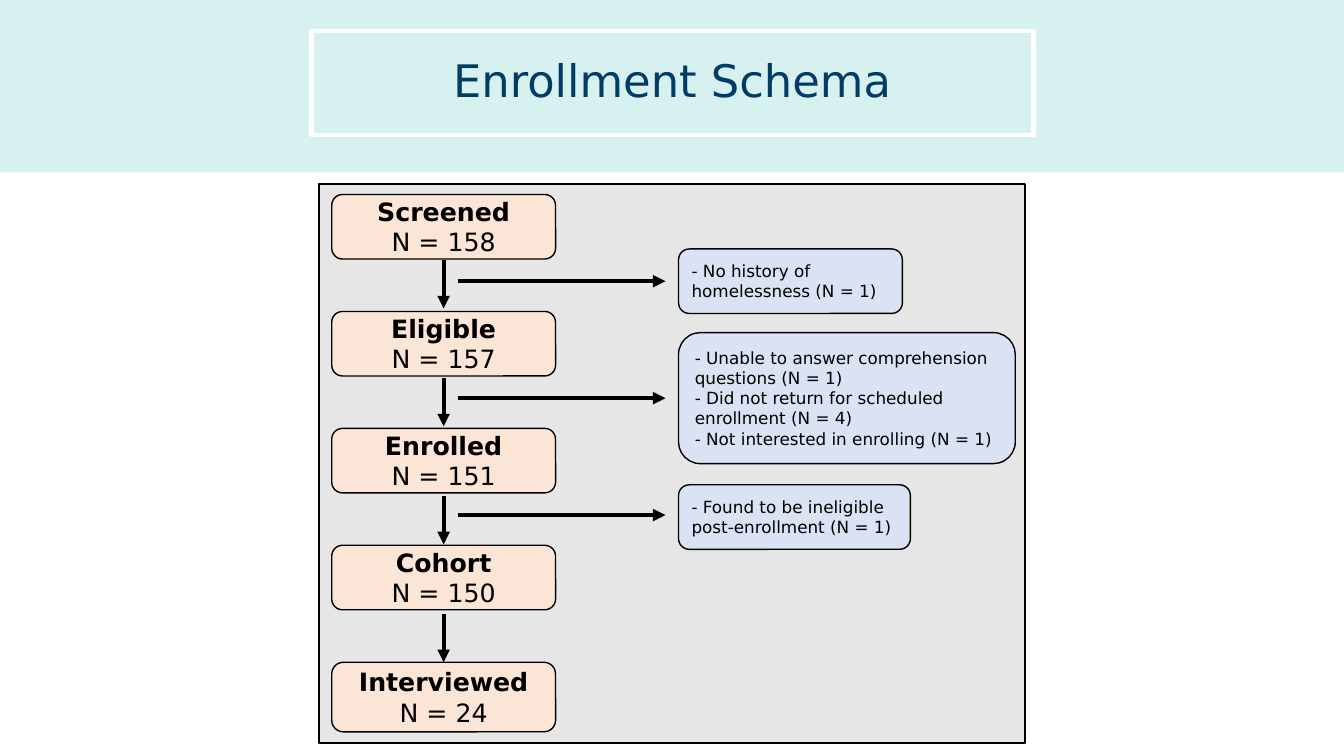
from lxml import etree
from pptx import Presentation
from pptx import util as u
from pptx.dml.color import RGBColor
from pptx.enum import shapes, text
from pptx.oxml.ns import qn

BLACK = RGBColor(0x00, 0x00, 0x00)
WHITE = RGBColor(0xFF, 0xFF, 0xFF)
TEAL = RGBColor(0xB0, 0xE3, 0xE2)
NAVY = RGBColor(0x00, 0x3C, 0x65)
GREY = RGBColor(0xE7, 0xE6, 0xE6)
PEACH = RGBColor(0xFB, 0xE5, 0xD6)
BLUE = RGBColor(0xDA, 0xE3, 0xF3)

STAGES = [
    ("Screened", 158, 0.64),
    ("Eligible", 157, 0.64),
    ("Enrolled", 151, 0.64),
    ("Cohort", 150, 0.64),
    ("Interviewed", 24, 0.69),
]
EXCLUSIONS = [
    (2.47, 2.22, 0.64, ["- No history of homelessness (N = 1)"]),
    (3.3, 3.34, 1.3, [
        "- Unable to answer comprehension questions (N = 1)",
        "- Did not return for scheduled enrollment (N = 4)",
        "- Not interested in enrolling (N = 1)",
    ]),
    (4.81, 2.3, 0.64, ["- Found to be ineligible post-enrollment (N = 1)"]),
]
STAGE_TOP, STAGE_STEP = 1.93, 1.16
DOWN_TOP, DOWN_STEP, DOWN_LENGTH = 2.58, 1.17, 0.48
SIDE_TOP, SIDE_STEP = 2.79, 1.16


class FlowSlide:
    font = "DejaVu Sans"

    def __init__(self, deck):
        self.page = deck.slides.add_slide(deck.slide_layouts[5])

    def label(self, shape, lines, size, color, align, bold_first=False):
        frame = shape.text_frame
        frame.text = "\n".join(lines)
        frame.word_wrap = True
        frame.auto_size = text.MSO_AUTO_SIZE.NONE
        frame.vertical_anchor = text.MSO_ANCHOR.MIDDLE
        for index, para in enumerate(frame.paragraphs):
            para.alignment = align
            for span in para.runs:
                span.font.name = self.font
                span.font.size = u.Pt(size)
                span.font.color.rgb = color
                span.font.bold = bold_first and index == 0

    def title(self, words, left, top, width, height):
        title = self.page.shapes.title
        title.left, title.top = u.Inches(left), u.Inches(top)
        title.width, title.height = u.Inches(width), u.Inches(height)
        title.line.color.rgb = WHITE
        title.line.width = u.Pt(3)
        self.label(title, [words], 32, NAVY, text.PP_ALIGN.CENTER)
        title.text_frame.paragraphs[0].line_spacing = 0.9
        self.page.shapes.element.append(title.element)

    def box(self, left, top, width, height, fill, line=None, rounded=False):
        kind = shapes.MSO_SHAPE.ROUNDED_RECTANGLE if rounded else shapes.MSO_SHAPE.RECTANGLE
        box = self.page.shapes.add_shape(
            kind, u.Inches(left), u.Inches(top), u.Inches(width), u.Inches(height))
        box.shadow.inherit = False
        box.fill.solid()
        box.fill.fore_color.rgb = fill
        if line:
            box.line.color.rgb = BLACK
            box.line.width = u.Pt(line)
        else:
            box.line.fill.background()
        return box

    def band(self, left, top, width, height, fill, opacity):
        band = self.box(left, top, width, height, fill)
        color = band.element.spPr.find(qn("a:solidFill")).find(qn("a:srgbClr"))
        etree.SubElement(color, qn("a:alpha"), val=str(opacity * 1000))

    def stage(self, left, top, width, height, name, count):
        box = self.box(left, top, width, height, PEACH, 1, rounded=True)
        self.label(box, [name, f"N = {count}"], 18, BLACK, text.PP_ALIGN.CENTER, bold_first=True)

    def exclusion(self, left, top, width, height, reasons):
        box = self.box(left, top, width, height, BLUE, 1, rounded=True)
        self.label(box, reasons, 12, BLACK, text.PP_ALIGN.LEFT)

    def arrow(self, x1, y1, x2, y2):
        arrow = self.page.shapes.add_connector(
            shapes.MSO_CONNECTOR.STRAIGHT,
            u.Inches(x1), u.Inches(y1), u.Inches(x2), u.Inches(y2))
        arrow.line.color.rgb = BLACK
        arrow.line.width = u.Pt(3)
        properties = arrow.element.spPr
        etree.SubElement(properties.find(qn("a:ln")), qn("a:tailEnd"), type="triangle")
        etree.SubElement(properties, qn("a:effectLst"))


def main():
    deck = Presentation()
    deck.slide_width, deck.slide_height = u.Inches(13.33), u.Inches(7.5)
    slide = FlowSlide(deck)
    slide.band(0, 0, 13.33, 1.71, TEAL, 50)
    slide.box(3.16, 1.83, 7.01, 5.54, GREY, 1.5)
    for index, (name, count, height) in enumerate(STAGES):
        slide.stage(3.29, STAGE_TOP + index * STAGE_STEP, 2.22, height, name, count)
    for index in range(len(STAGES) - 1):
        top = DOWN_TOP + index * DOWN_STEP
        slide.arrow(4.4, top, 4.4, top + DOWN_LENGTH)
    for index, (top, width, height, reasons) in enumerate(EXCLUSIONS):
        level = SIDE_TOP + index * SIDE_STEP
        slide.arrow(4.54, level, 6.6, level)
        slide.exclusion(6.73, top, width, height, reasons)
    slide.title("Enrollment Schema", 3.09, 0.31, 7.16, 1.03)
    deck.save("out.pptx")


if __name__ == "__main__":
    main()
